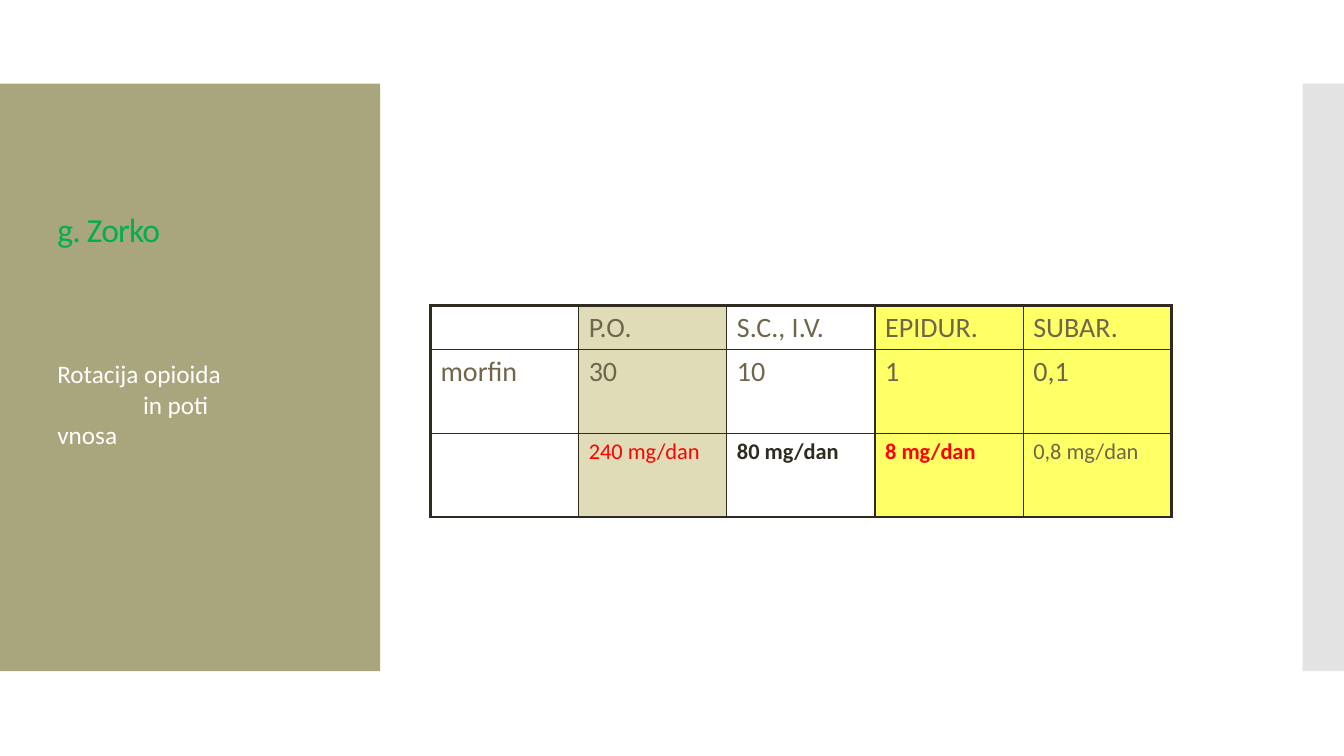
from lxml import etree
from pptx import Presentation
from pptx.dml.color import RGBColor
from pptx.enum.shapes import MSO_SHAPE
from pptx.enum.text import MSO_ANCHOR, PP_ALIGN
from pptx.oxml.ns import qn
from pptx.util import Inches, Pt

RECTANGLE = MSO_SHAPE.RECTANGLE
BOTTOM = MSO_ANCHOR.BOTTOM
LEFT = PP_ALIGN.LEFT
INK, BROWN, RED = "2F2B20", "6F664C", "FF0000"
COLUMN_FILLS = [None, "DFDCB7", None, "FFFF66", "FFFF66"]
ROW_HEIGHTS = [0.44, 0.83, 0.83]
COLUMN_WIDTH = 1.47
TABLE_TEXT = [
    ["", "P.O.", "S.C., I.V.", "EPIDUR.", "SUBAR."],
    ["morfin", "30", "10", "1", "0,1"],
    ["", "240 mg/dan", "80 mg/dan", "8 mg/dan", "0,8 mg/dan"],
]
DOSE_FORMATS = [(BROWN, False), (RED, False), (INK, True), (RED, True), (BROWN, False)]


def color(value):
    return RGBColor.from_string(value)


def format_font(font, values):
    font.color.rgb = color(values["color"])
    for name in ("size", "bold", "name"):
        setattr(font, name, values[name])


presentation = Presentation()
presentation.slide_width = Inches(13.33)
presentation.slide_height = Inches(7.5)
slide = presentation.slides.add_slide(presentation.slide_layouts[5])
title = slide.shapes.title

for left, width, fill in [(0, 3.77, "A9A57C"), (12.92, 0.41, "C8C8C8")]:
    panel = slide.shapes.add_shape(
        RECTANGLE, Inches(left), Inches(0.83), Inches(width), Inches(5.83)
    )
    panel.shadow.inherit = False
    panel.fill.solid()
    panel.fill.fore_color.rgb = color(fill)
    panel.line.fill.background()
    title._element.addprevious(panel._element)
panel_color = panel._element.spPr.find(qn("a:solidFill")).find(qn("a:srgbClr"))
etree.SubElement(panel_color, qn("a:alpha"), val="50000")

title_box = {"left": 0.47, "top": 0.67, "width": 2.32, "height": 2.4}
for name, value in title_box.items():
    setattr(title, name, Inches(value))
title.text_frame.text = "g. Zorko"
title.text_frame.word_wrap = True
title.text_frame.vertical_anchor = BOTTOM
title.text_frame.margin_bottom = Inches(0.59)
paragraph = title.text_frame.paragraphs[0]
paragraph.alignment = LEFT
paragraph.line_spacing = 0.9
run = paragraph.runs[0]
format_font(run.font, {"color": "00B050", "size": Pt(24), "bold": False, "name": "Calibri"})
run.font._element.set("spc", "-60")

subtitle = slide.shapes.add_textbox(Inches(0.47), Inches(3.51), Inches(2.32), Inches(2.8))
subtitle.text_frame.word_wrap = True
paragraph = subtitle.text_frame.paragraphs[0]
paragraph.text = "Rotacija opioida\v\tin poti\vvnosa"
paragraph.alignment = LEFT
tab_list = etree.SubElement(paragraph._p.get_or_add_pPr(), qn("a:tabLst"))
etree.SubElement(tab_list, qn("a:tab"), pos=str(Inches(0.85)), algn="l")
for run in paragraph.runs:
    format_font(run.font, {"color": "FFFFFF", "size": Pt(18), "bold": False, "name": "Calibri"})

row_count, column_count = len(ROW_HEIGHTS), len(COLUMN_FILLS)
table = slide.shapes.add_table(
    row_count, column_count, Inches(4.27), Inches(3.03),
    Inches(COLUMN_WIDTH * column_count), Inches(sum(ROW_HEIGHTS)),
).table
table.first_row = False
table.horz_banding = False
for column in table.columns:
    column.width = Inches(COLUMN_WIDTH)

for row_index, row_height in enumerate(ROW_HEIGHTS):
    table.rows[row_index].height = Inches(row_height)
    is_dose = row_index == row_count - 1
    for column_index, fill in enumerate(COLUMN_FILLS):
        cell = table.cell(row_index, column_index)
        cell.text = TABLE_TEXT[row_index][column_index]
        text_color, bold = DOSE_FORMATS[column_index] if is_dose else (BROWN, False)
        paragraph = cell.text_frame.paragraphs[0]
        font = paragraph.runs[0].font if paragraph.runs else paragraph.font
        size = Pt(16 if is_dose else 20)
        format_font(font, {"color": text_color, "size": size, "bold": bold, "name": "Calibri"})
        outer_sides = {
            "a:lnL": column_index == 0,
            "a:lnR": column_index == column_count - 1,
            "a:lnT": row_index == 0,
            "a:lnB": is_dose,
        }
        for tag, is_outer in outer_sides.items():
            border_width = Pt(2.25 if is_outer else 1)
            border = etree.SubElement(cell._tc.get_or_add_tcPr(), qn(tag), w=str(border_width))
            border_fill = etree.SubElement(border, qn("a:solidFill"))
            etree.SubElement(border_fill, qn("a:srgbClr"), val=INK)
        if fill:
            cell.fill.solid()
            cell.fill.fore_color.rgb = color(fill)
        else:
            cell.fill.background()

presentation.save("out.pptx")
